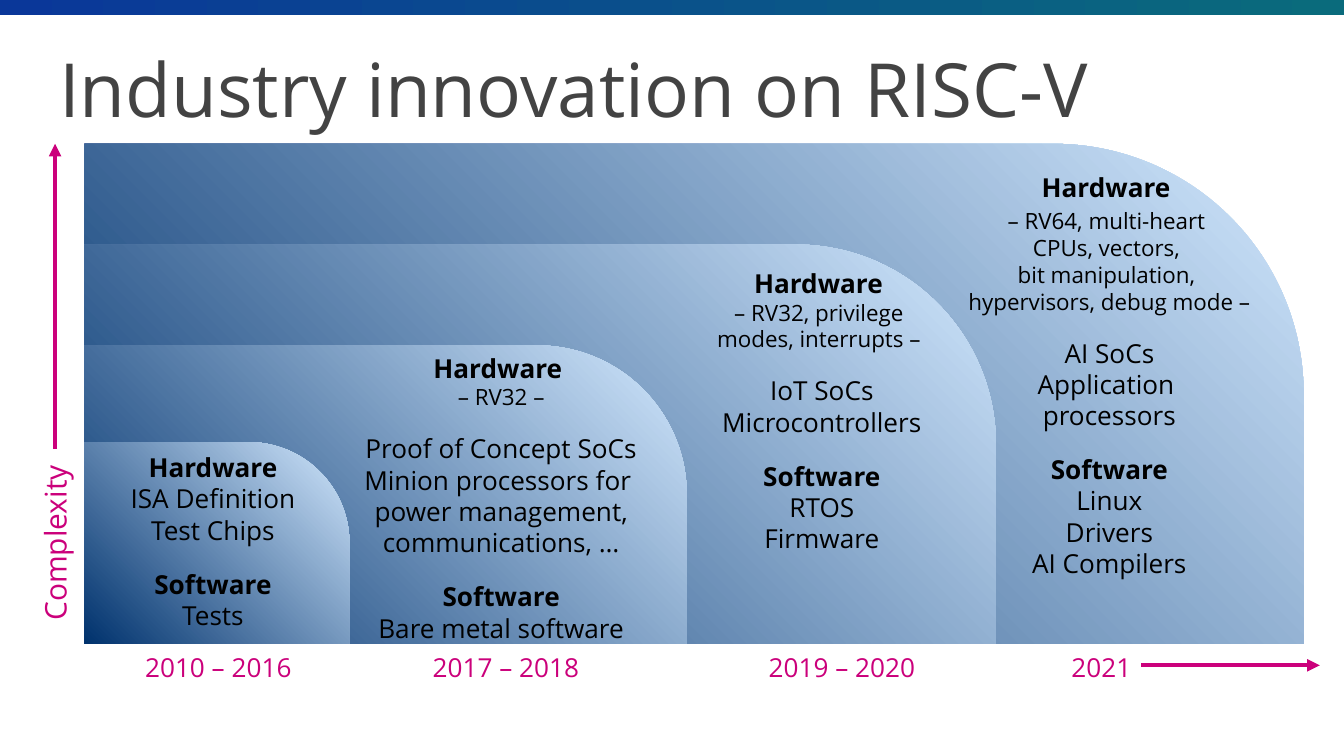
from copy import deepcopy
from pptx import Presentation
from pptx.dml.color import RGBColor as RGB
from pptx.enum.shapes import MSO_CONNECTOR as LINE, MSO_SHAPE as SHAPE
from pptx.enum.text import MSO_ANCHOR as ANCHOR, PP_ALIGN as ALIGN
from pptx.oxml.ns import qn
from pptx.util import Inches, Pt
from lxml.etree import SubElement

TITLE = "Industry innovation on RISC-V"
AXIS = "Complexity"
ERAS = [
    {"year": "2010 – 2016 ", "left": 0.97, "size": (1.97, 1.5),
     "box": (0.72, 3.31, 1.73, 1.45), "head": "Hardware", "note": "",
     "hard": ["ISA Definition", "Test Chips"], "soft": ["Tests"]},
    {"year": "2017 – 2018 ", "left": 3.11, "size": (4.48, 2.22),
     "box": (2.35, 2.57, 2.76, 2.29), "head": "Hardware ",
     "note": "– RV32 –",
     "hard": ["Proof of Concept SoCs", "Minion processors for \n"
              "power management, communications, …"],
     "soft": ["Bare metal software"]},
    {"year": "2019 – 2020 ", "left": 5.61, "size": (6.78, 2.97),
     "box": (4.74, 1.94, 2.75, 2.26), "head": "Hardware ",
     "note": "– RV32, privilege \nmodes, interrupts – ",
     "hard": ["IoT SoCs", "Microcontrollers"],
     "soft": ["RTOS", "Firmware"]},
    {"year": "2021", "left": 7.54, "size": (9.07, 3.72),
     "box": (6.86, 1.23, 2.79, 3.16), "head": "Hardware ", "lift": 2,
     "note": "– RV64, multi-heart \nCPUs, vectors, \n"
             "bit manipulation, \nhypervisors, debug mode –",
     "hard": ["AI SoCs", "Application \nprocessors"],
     "soft": ["Linux", "Drivers", "AI Compilers"]},
]
ARROWS = [(0.41, 3.34, 0.41, 1.07), (8.49, 4.95, 9.82, 4.95)]
LEFT, BASE = 0.63, 4.79
THEME = {
    "font": "Open Sans", "title": "434343", "text": "000000", "mark": "CB007B",
    "bar": ("0A3799", "0A6B7C"), "step": ("D2E8FE", "00326D"),
    "big": 40, "axis": 16, "body": 14, "note": 12, "gap": 12, "line": 2.25,
}


def place(box):
    return [Inches(n) for n in box]


def write(frame, text, size=THEME["body"], color=THEME["text"], bold=False,
          align=ALIGN.CENTER, before=0):
    first = frame.paragraphs[0]
    para = frame.add_paragraph() if first.runs else first
    para.alignment = align
    if before:
        para.space_before = Pt(before)
    for i, part in enumerate(text.split("\n")):
        if i:
            para.add_line_break()
            para._p[-1].append(deepcopy(run._r.rPr))
        run = para.add_run()
        run.text = part
        font = run.font
        font.name, font.size, font.bold = THEME["font"], Pt(size), bold
        font.color.rgb = RGB.from_string(color)


def label(slide, box, wrap=True):
    shape = slide.shapes.add_textbox(*place(box))
    shape.text_frame.word_wrap = wrap
    return shape


def panel(slide, kind, box, colors, angle):
    shape = slide.shapes.add_shape(kind, *place(box))
    shape.shadow.inherit = False
    shape.line.fill.background()
    shape.fill.gradient()
    shape.fill.gradient_angle = angle
    for stop, color in zip(shape.fill.gradient_stops, colors):
        stop.color.rgb = RGB.from_string(color)
    return shape


def arrow(slide, ends):
    line = slide.shapes.add_connector(LINE.STRAIGHT, *place(ends))
    line.line.color.rgb = RGB.from_string(THEME["mark"])
    line.line.width = Pt(THEME["line"])
    SubElement(line.line._get_or_add_ln(), qn("a:tailEnd"), type="triangle")
    SubElement(line._element.spPr, qn("a:effectLst"))


def story(slide, era):
    frame = label(slide, era["box"]).text_frame
    write(frame, era["head"], bold=True)
    if era["note"]:
        write(frame, era["note"], size=THEME["note"],
              before=era.get("lift", 0))
    for i, text in enumerate(era["hard"]):
        write(frame, text,
              before=THEME["gap"] if era["note"] and not i else 0)
    write(frame, "Software", bold=True, before=THEME["gap"])
    for text in era["soft"]:
        write(frame, text)


def main():
    deck = Presentation()
    deck.slide_width = Inches(10)
    deck.slide_height = deck.slide_width * 9 // 16
    slide = deck.slides.add_slide(deck.slide_layouts[5])

    panel(slide, SHAPE.RECTANGLE, (0, 0, 10, 0.11), THEME["bar"], 0)
    title = slide.shapes.title
    title.left, title.top, title.width, title.height = place(
        (0.34, 0.22, 9.32, 0.82))
    frame = title.text_frame
    frame.word_wrap = True
    frame.vertical_anchor = ANCHOR.TOP
    frame.margin_left = frame.margin_right = Inches(0.1)
    frame.margin_top = frame.margin_bottom = Inches(0.1)
    write(frame, TITLE, size=THEME["big"], color=THEME["title"],
          align=ALIGN.LEFT)

    for era in reversed(ERAS):
        wide, high = era["size"]
        step = panel(slide, SHAPE.ROUND_1_RECTANGLE,
                     (LEFT, BASE - high, wide, high), THEME["step"], 225)
        step.adjustments[0] = 0.5
    for era in reversed(ERAS):
        story(slide, era)

    axis = label(slide, (-0.47, 3.65, 1.76, 0.37))
    axis.rotation = 270
    write(axis.text_frame, AXIS, size=THEME["axis"], color=THEME["mark"],
          align=ALIGN.LEFT)
    for era in ERAS:
        year = label(slide, (era["left"], 4.8, 1.31, 0.34), wrap=False)
        write(year.text_frame, era["year"], color=THEME["mark"])
    for ends in ARROWS:
        arrow(slide, ends)
    deck.save("out.pptx")


if __name__ == "__main__":
    main()
